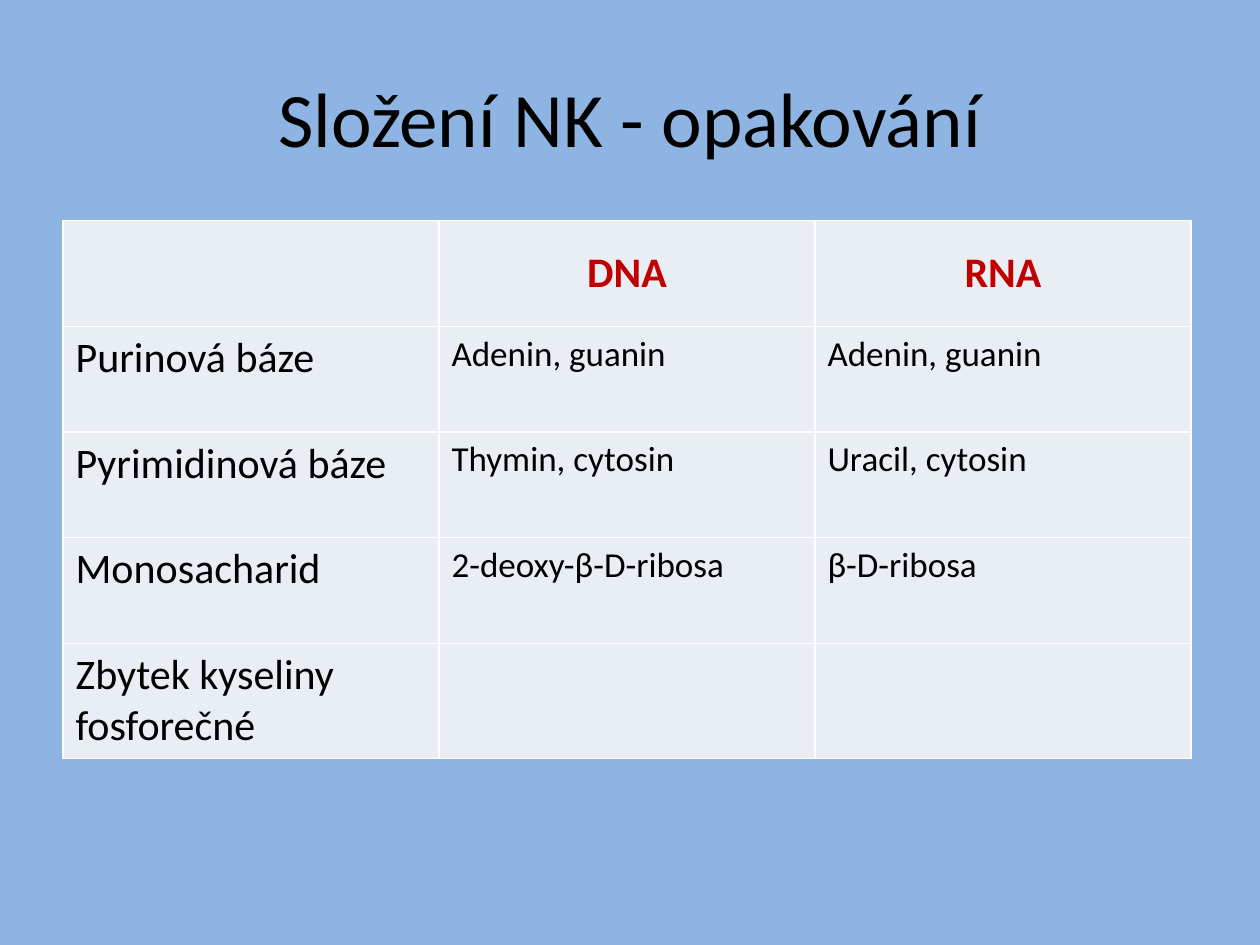
from lxml import etree
from pptx import Presentation
from pptx.dml.color import RGBColor
from pptx.enum.text import MSO_ANCHOR, PP_ALIGN
from pptx.oxml.ns import qn
from pptx.util import Cm, Pt

MID = MSO_ANCHOR.MIDDLE
TOP = MSO_ANCHOR.TOP
LEFT = PP_ALIGN.LEFT
MIDDLE = PP_ALIGN.CENTER

ROWS = [
    ["", "DNA", "RNA"],
    ["Purinová báze", "Adenin, guanin", "Adenin, guanin"],
    ["Pyrimidinová báze", "Thymin, cytosin", "Uracil, cytosin"],
    ["Monosacharid", "2-deoxy-β-D-ribosa", "β-D-ribosa"],
    ["Zbytek kyseliny fosforečné", "", ""],
]


def color(code):
    return RGBColor.from_string(code)


class Deck:
    font = "Calibri"
    ink = "000000"
    red = "C00000"
    pale = "E9EDF4"
    rule = "FFFFFF"
    back = "8EB4E3"

    def __init__(self):
        self.prs = Presentation()
        self.prs.slide_width = Cm(25.4)
        self.prs.slide_height = Cm(19.05)
        self.slide = self.prs.slides.add_slide(self.prs.slide_layouts[5])
        fill = self.slide.background.fill
        fill.solid()
        fill.fore_color.rgb = color(self.back)

    def text(self, frame, words, size, ink, align, bold=False):
        para = frame.paragraphs[0]
        para.alignment = align
        run = para.add_run()
        run.text = words
        run.font.name = self.font
        run.font.size = Pt(size)
        run.font.bold = bold
        run.font.color.rgb = color(ink)

    def title(self, words, left, top, width, height):
        box = self.slide.shapes.title
        box.left, box.top = Cm(left), Cm(top)
        box.width, box.height = Cm(width), Cm(height)
        box.text_frame.vertical_anchor = MID
        self.text(box.text_frame, words, 44, self.ink, MIDDLE)

    def border(self, cell):
        props = cell._tc.get_or_add_tcPr()
        for spot, side in enumerate(("a:lnL", "a:lnR", "a:lnT", "a:lnB")):
            line = etree.Element(qn(side), w=str(Pt(1)))
            fill = etree.SubElement(line, qn("a:solidFill"))
            etree.SubElement(fill, qn("a:srgbClr"), val=self.rule)
            props.insert(spot, line)

    def cell(self, cell, words, head, first):
        cell.fill.solid()
        cell.fill.fore_color.rgb = color(self.pale)
        self.border(cell)
        cell.vertical_anchor = MID if head else TOP
        if words:
            size = 24 if head or first else 20
            ink = self.red if head else self.ink
            align = MIDDLE if head else LEFT
            self.text(cell.text_frame, words, size, ink, align, head)

    def table(self, rows, left, top, width, height):
        grid = self.slide.shapes.add_table(
            len(rows), len(rows[0]), Cm(left), Cm(top), Cm(width), Cm(height)
        ).table
        grid.first_row = False
        grid.horz_banding = False
        for r, row in enumerate(rows):
            for c, words in enumerate(row):
                self.cell(grid.cell(r, c), words, r == 0, c == 0)


def main():
    deck = Deck()
    deck.title("Složení NK - opakování", 1.27, 0.76, 22.86, 3.18)
    deck.table(ROWS, 1.27, 4.45, 22.74, 10.65)
    deck.prs.save("out.pptx")


if __name__ == "__main__":
    main()
